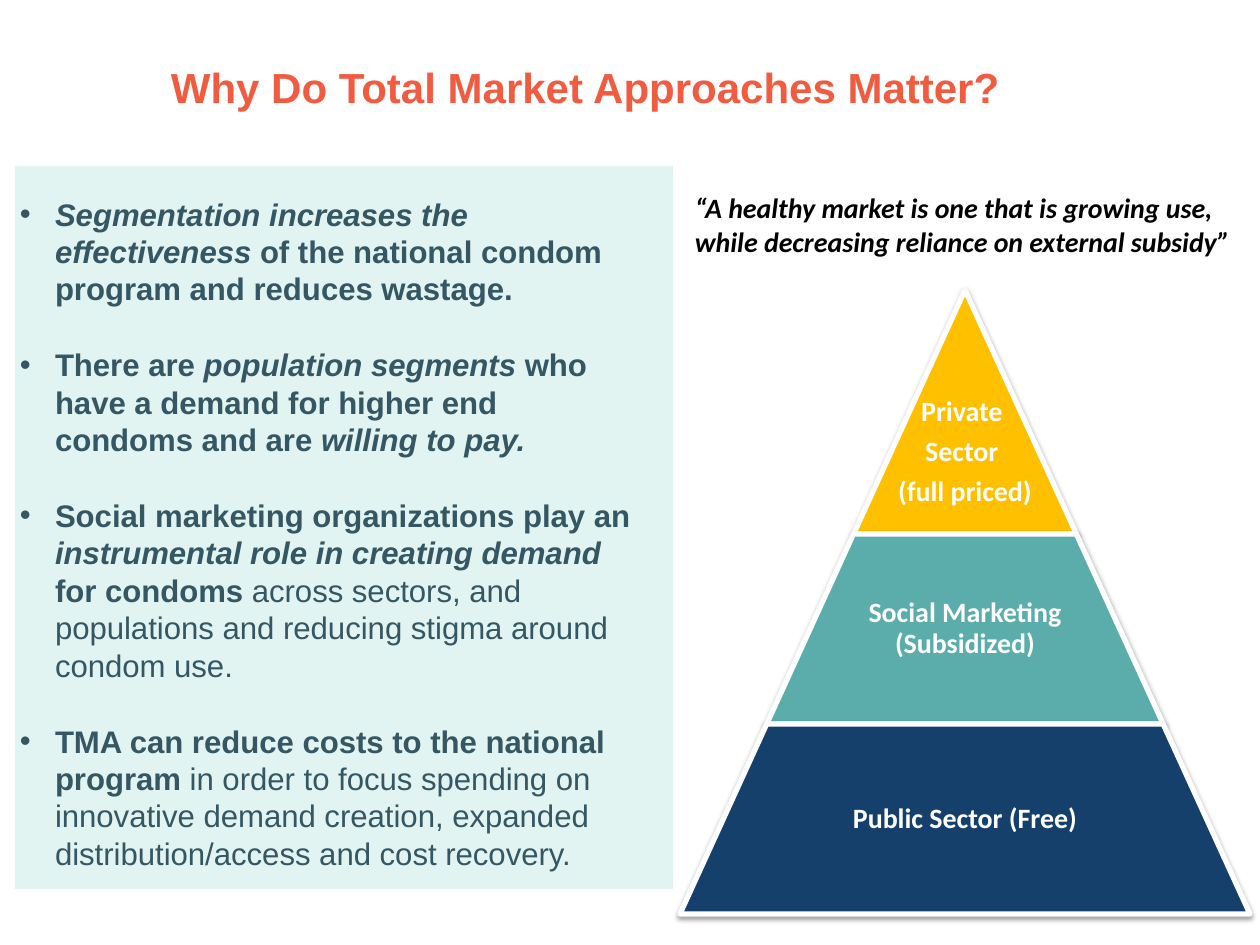
import lxml.etree
import pptx
import pptx.dml.color
import pptx.enum.shapes
import pptx.enum.text
import pptx.oxml
import pptx.oxml.ns
import pptx.util

PX_PER_INCH = 126
COLORS = {
    "title": "F15B40", "panel": "E2F4F2", "body": "355763",
    "quote": "000000", "white": "FFFFFF", "shadow": "000000",
    "private": "FFC000", "social": "5BADAC", "public": "16406C",
}
ALIGN = pptx.enum.text.PP_ALIGN
ANCHOR = pptx.enum.text.MSO_ANCHOR
SHAPE = pptx.enum.shapes.MSO_SHAPE
BOLD, ITALIC, REGULAR = (True, False), (True, True), (False, False)

REASONS = [
    [("Segmentation increases the effectiveness", ITALIC),
     (" of the national condom program and reduces wastage.", BOLD)],
    [("There are ", BOLD), ("population segments", ITALIC),
     (" who have a demand for higher end condoms and are ", BOLD),
     ("willing to pay.", ITALIC)],
    [("Social marketing organizations play an ", BOLD),
     ("instrumental role in creating demand", ITALIC),
     (" for condoms ", BOLD),
     ("across sectors, and populations and reducing stigma around condom use.",
      REGULAR)],
    [("TMA can reduce costs to the national program ", BOLD),
     ("in order to focus spending on innovative demand creation, expanded "
      "distribution/access and cost recovery.", REGULAR)],
]
# Tier height in px, colour, lines of the label
TIERS = [
    (244, "private", ["Private ", "Sector ", "(full priced)"]),
    (190, "social", ["Social Marketing (Subsidized)"]),
    (190, "public", ["Public Sector (Free)"]),
]


def px(length):
    return pptx.util.Emu(round(length * 914400 / PX_PER_INCH))


def rgb(name):
    return pptx.dml.color.RGBColor.from_string(COLORS[name])


def add_text(slide, box, paragraphs, *, size, color, font="Calibri",
             align=ALIGN.LEFT, anchor=ANCHOR.TOP, inset=(13, 6),
             line_spacing=1.0, space_after=0, bullet_indent=0):
    """Each paragraph is a list of (text, (bold, italic)) runs."""
    frame = slide.shapes.add_textbox(*map(px, box)).text_frame
    frame.word_wrap = True
    frame.vertical_anchor = anchor
    frame.margin_left = frame.margin_right = px(inset[0])
    frame.margin_top = frame.margin_bottom = px(inset[1])
    for number, runs in enumerate(paragraphs):
        paragraph = frame.add_paragraph() if number else frame.paragraphs[0]
        paragraph.alignment = align
        paragraph.line_spacing = line_spacing
        paragraph.space_after = pptx.util.Pt(space_after)
        if bullet_indent:
            properties = paragraph._p.get_or_add_pPr()
            properties.set("marL", str(px(bullet_indent)))
            properties.set("indent", str(-px(bullet_indent)))
            for tag, key, value in (("a:buFont", "typeface", "Arial"),
                                    ("a:buChar", "char", "•")):
                lxml.etree.SubElement(
                    properties, pptx.oxml.ns.qn(tag)).set(key, value)
        for words, (bold, italic) in runs:
            run = paragraph.add_run()
            run.text = words
            run.font.name = font
            run.font.size = pptx.util.Pt(size)
            run.font.color.rgb = rgb(color)
            run.font.bold, run.font.italic = bold, italic


def add_filled(slide, kind, box, color):
    shape = slide.shapes.add_shape(kind, *map(px, box))
    shape.shadow.inherit = False
    shape.fill.solid()
    shape.fill.fore_color.rgb = rgb(color)
    shape.line.fill.background()
    return shape


def outline_tier(tier):
    """White rounded outline with a soft shadow below."""
    tier.line.color.rgb = rgb("white")
    tier.line.width = pptx.util.Pt(3)
    properties = tier._element.spPr
    outline = properties.find(pptx.oxml.ns.qn("a:ln"))
    lxml.etree.SubElement(outline, pptx.oxml.ns.qn("a:round"))
    effects = properties.find(pptx.oxml.ns.qn("a:effectLst"))
    effects.append(pptx.oxml.parse_xml(
        f'<a:outerShdw {pptx.oxml.ns.nsdecls("a")} blurRad="39400" '
        'dist="20300" dir="5400000" rotWithShape="0">'
        f'<a:srgbClr val="{COLORS["shadow"]}"><a:alpha val="38000"/>'
        '</a:srgbClr></a:outerShdw>'))


def add_title(slide, box):
    add_text(slide, box,
             [[("Why Do Total Market Approaches Matter?", BOLD)]],
             size=24, color="title", font="Arial")


def add_reasons(slide, box):
    left, top, width, height = box
    add_filled(slide, SHAPE.RECTANGLE, box, "panel")
    add_text(slide, (left - 8, top + 23, width - 9, height - 23), REASONS,
             size=17.8, color="body", font="Arial",
             space_after=22, bullet_indent=35)


def add_quote(slide, box):
    add_text(slide, box,
             [[("“A healthy market is one that is growing use, while "
                "decreasing reliance on external subsidy”", ITALIC)]],
             size=16, color="quote")


def add_pyramid(slide, box):
    left, top, base, full_height = box
    center = left + base / 2
    depth = 0
    for height, color, lines in TIERS:
        upper = base * depth / full_height
        lower = base * (depth + height) / full_height
        tier = add_filled(slide, SHAPE.TRAPEZOID,
                          (center - lower / 2, top + depth, lower, height),
                          color)
        tier.adjustments[0] = (lower - upper) / 2 / min(lower, height)
        outline_tier(tier)
        # The pointed tier holds its label in the lower two thirds
        label_width = lower * (0.65 if depth else 1)
        label_height = height if depth else height * 2 / 3
        add_text(slide,
                 (center - label_width / 2, top + depth + height - label_height,
                  label_width, label_height),
                 [[(line, BOLD)] for line in lines],
                 size=16, color="white", align=ALIGN.CENTER,
                 anchor=ANCHOR.MIDDLE, inset=(3, 3), line_spacing=0.9,
                 space_after=5.6)
        depth += height


def main():
    deck = pptx.Presentation()
    deck.slide_width, deck.slide_height = px(1260), px(945)
    slide = deck.slides.add_slide(deck.slide_layouts[6])
    add_reasons(slide, (15, 166, 658, 723))
    add_pyramid(slide, (680, 290, 570, 624))
    add_quote(slide, (682, 185, 567, 80))
    add_title(slide, (158, 56, 869, 63))
    deck.save("out.pptx")


if __name__ == "__main__":
    main()
